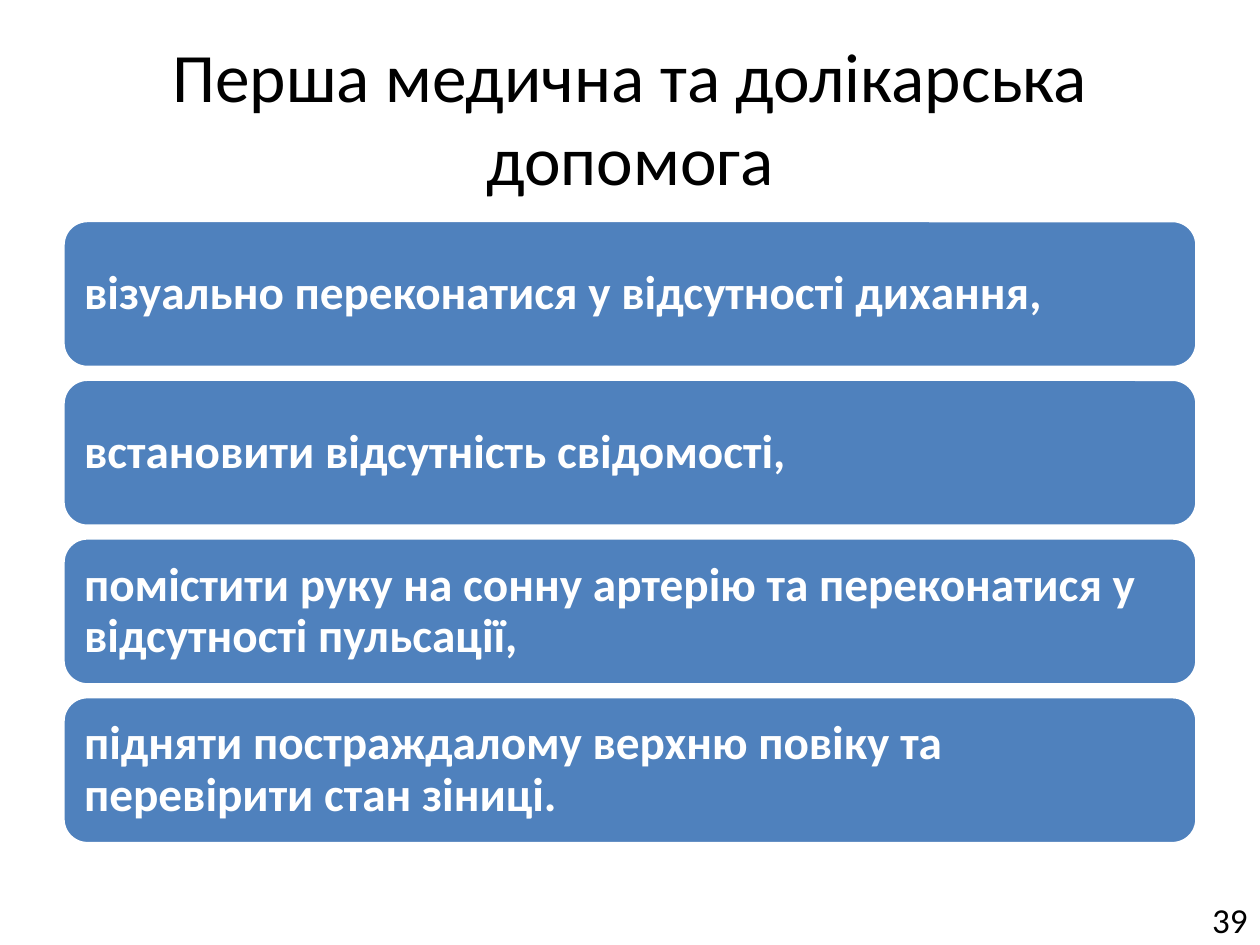
"""Build the first-aid slide with four step bars."""
from dataclasses import dataclass

from pptx import Presentation
from pptx.dml.color import RGBColor
from pptx.enum.shapes import MSO_SHAPE
from pptx.enum.text import MSO_ANCHOR, PP_ALIGN
from pptx.util import Pt

ROUNDED = MSO_SHAPE.ROUNDED_RECTANGLE
MIDDLE = MSO_ANCHOR.MIDDLE
LEFT, CENTER, RIGHT = PP_ALIGN.LEFT, PP_ALIGN.CENTER, PP_ALIGN.RIGHT


@dataclass(frozen=True)
class Theme:
    font: str = "Calibri"
    ink: RGBColor = RGBColor(0, 0, 0)
    paper: RGBColor = RGBColor(255, 255, 255)
    bar: RGBColor = RGBColor(0x4F, 0x81, 0xBD)
    title_size: float = 39.6
    step_size: float = 27
    number_size: float = 20


@dataclass(frozen=True)
class Area:
    left: float
    top: float
    width: float
    height: float

    def lengths(self) -> tuple:
        return Pt(self.left), Pt(self.top), Pt(self.width), Pt(self.height)


@dataclass(frozen=True)
class Label:
    text: str
    size: float
    color: RGBColor
    align: PP_ALIGN
    bold: bool = False
    line_spacing: float = 1.0


THEME = Theme()
TITLE_AREA = Area(36, 21.6, 648, 90)
NUMBER_AREA = Area(552, 511.2, 168, 28.8)
FIRST_BAR = Area(36, 126, 648, 84)
BAR_PITCH = 90.7
BAR_INSET = 8
STEPS = (
    "візуально переконатися у відсутності дихання,",
    "встановити відсутність свідомості,",
    "помістити руку на сонну артерію та переконатися у відсутності пульсації,",
    "підняти постраждалому верхню повіку та перевірити стан зіниці.",
)


def write(shape, label: Label) -> None:
    frame = shape.text_frame
    frame.word_wrap = True
    frame.vertical_anchor = MIDDLE
    para = frame.paragraphs[0]
    para.alignment = label.align
    para.line_spacing = label.line_spacing
    span = para.add_run()
    span.text = label.text
    span.font.name = THEME.font
    span.font.size = Pt(label.size)
    span.font.bold = label.bold
    span.font.color.rgb = label.color


def add_text(page, area: Area, label: Label) -> None:
    write(page.shapes.add_textbox(*area.lengths()), label)


def add_bar(page, area: Area, text: str) -> None:
    bar = page.shapes.add_shape(ROUNDED, *area.lengths())
    bar.shadow.inherit = False
    bar.fill.solid()
    bar.fill.fore_color.rgb = THEME.bar
    bar.line.color.rgb = THEME.paper
    bar.line.width = Pt(2)
    frame = bar.text_frame
    frame.margin_left = frame.margin_right = Pt(BAR_INSET)
    write(bar, Label(text, THEME.step_size, THEME.paper, LEFT, True, 0.9))


def main() -> None:
    deck = Presentation()
    deck.slide_width, deck.slide_height = Pt(720), Pt(540)
    page = deck.slides.add_slide(deck.slide_layouts[6])
    add_text(page, TITLE_AREA, Label("Перша медична та долікарська допомога",
                                     THEME.title_size, THEME.ink, CENTER))
    for index, step in enumerate(STEPS):
        top = FIRST_BAR.top + index * BAR_PITCH
        add_bar(page, Area(FIRST_BAR.left, top, FIRST_BAR.width, FIRST_BAR.height), step)
    add_text(page, NUMBER_AREA, Label("39", THEME.number_size, THEME.ink, RIGHT))
    deck.save("out.pptx")


if __name__ == "__main__":
    main()
